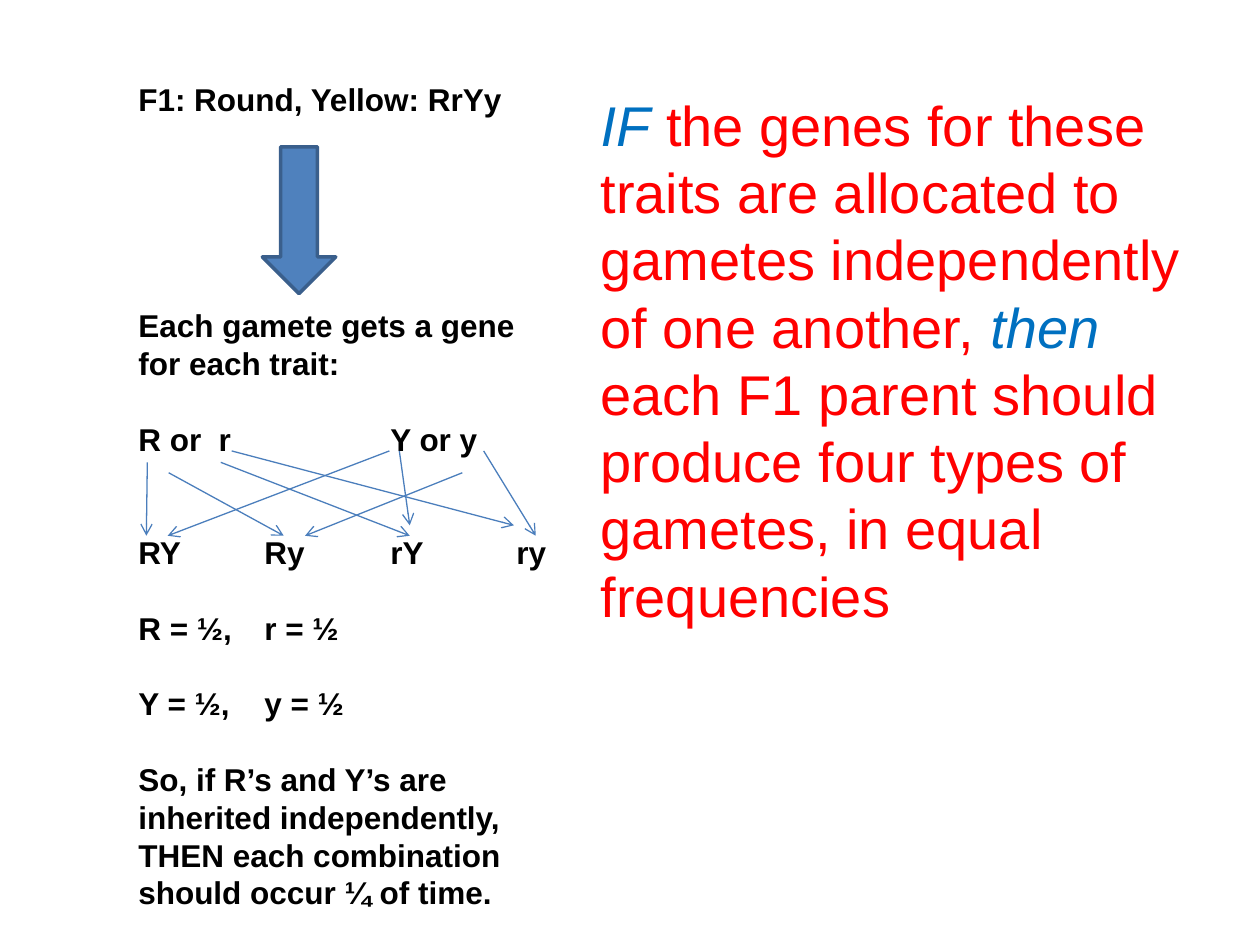
from typing import NamedTuple

from lxml import etree
from pptx import Presentation
from pptx.dml.color import RGBColor
from pptx.enum.shapes import MSO_CONNECTOR, MSO_SHAPE
from pptx.enum.text import MSO_AUTO_SIZE
from pptx.oxml.ns import qn
from pptx.util import Cm, Pt

LINE = MSO_CONNECTOR.STRAIGHT
DOWN = MSO_SHAPE.DOWN_ARROW
GROW = MSO_AUTO_SIZE.SHAPE_TO_FIT_TEXT
FONT = "Arial"
SIZE = 18
PITCH = SIZE * 1.2
TAB = 2.54
HEX = {
    "black": "000000", "red": "FF0000", "blue": "0070C0",
    "fill": "4F81BD", "edge": "3A5F8C", "link": "4B7EBC",
}


class Step(NamedTuple):
    """A line of the cross and the number of empty rows above it."""
    text: str
    gap: int = 1


class Link(NamedTuple):
    """An arrow from an allele to a gamete, in centimetres."""
    x: float
    y: float
    to_x: float
    to_y: float


class Part(NamedTuple):
    """A piece of the claim and whether it is stressed."""
    text: str
    stress: bool = False


STEPS = [
    Step("F1: Round, Yellow: RrYy", 0),
    Step("Each gamete gets a gene for each trait:", 5),
    Step("R or  r\t\tY or y"),
    Step("RY\tRy\trY\try", 2),
    Step("R = ½,\tr = ½"),
    Step("Y = ½,\ty = ½"),
    Step("So, if R’s and Y’s are inherited independently,"),
    Step("THEN each combination should occur ¼ of time.", 0),
]
HIGH, MID, LOW = 9.09, 9.32, 9.53
NEAR, END = 10.59, 10.8
LINKS = [
    Link(2.97, MID, 2.95, END),
    Link(3.4, LOW, 5.72, END),
    Link(4.45, MID, 8.26, END),
    Link(7.85, HIGH, 3.38, END),
    Link(9.32, LOW, 6.15, END),
    Link(4.67, HIGH, 10.36, NEAR),
    Link(8.05, HIGH, 8.26, NEAR),
    Link(9.75, HIGH, 10.8, END),
]
CLAIM = [
    Part("IF", True),
    Part(" the genes for these traits are allocated to gametes independently of one another, "),
    Part("then", True),
    Part(" each F1 parent should produce four types of gametes, in equal frequencies"),
]


def tint(name: str) -> RGBColor:
    """Return a named colour."""
    return RGBColor.from_string(HEX[name])


def add_frame(slide, left: float, top: float, width: float, height: float):
    """Add a wrapping text box and return its text frame."""
    box = slide.shapes.add_textbox(Cm(left), Cm(top), Cm(width), Cm(height))
    frame = box.text_frame
    frame.word_wrap = True
    frame.auto_size = GROW
    return frame


def add_tabs(para, count: int) -> None:
    """Give a paragraph evenly spaced left tab stops."""
    props = para._p.get_or_add_pPr()
    tabs = etree.SubElement(props, qn("a:tabLst"))
    for i in range(1, count + 1):
        etree.SubElement(tabs, qn("a:tab"), pos=str(Cm(i * TAB)), algn="l")


def add_steps(slide, steps: list[Step]) -> None:
    """Write the steps of the cross, one paragraph each."""
    frame = add_frame(slide, 2.54, 1.48, 8.89, 17.2)
    for i, step in enumerate(steps):
        para = frame.add_paragraph() if i else frame.paragraphs[0]
        para.text = step.text
        para.space_before = Pt(step.gap * PITCH)
        if "\t" in step.text:
            add_tabs(para, 3)
        font = para.font
        font.name, font.size, font.bold = FONT, Pt(SIZE), True
        font.color.rgb = tint("black")


def add_claim(slide, parts: list[Part]) -> None:
    """Write the claim with its stressed words."""
    para = add_frame(slide, 11.86, 1.7, 12.5, 11.2).paragraphs[0]
    para.font.name, para.font.size = FONT, Pt(32)
    for part in parts:
        run = para.add_run()
        run.text = part.text
        run.font.italic = part.stress
        run.font.color.rgb = tint("blue" if part.stress else "red")


def add_block(slide) -> None:
    """Draw the block arrow from the parent to its gametes."""
    block = slide.shapes.add_shape(DOWN, Cm(5.29), Cm(2.96), Cm(1.48), Cm(2.96))
    block.shadow.inherit = False
    block.fill.solid()
    block.fill.fore_color.rgb = tint("fill")
    block.line.color.rgb = tint("edge")
    block.line.width = Pt(2)


def add_link(slide, link: Link) -> None:
    """Draw a thin line with an open head at its end."""
    line = slide.shapes.add_connector(LINE, *(Cm(v) for v in link))
    line.line.color.rgb = tint("link")
    line.line.width = Pt(0.75)
    props = line.element.spPr
    etree.SubElement(props.find(qn("a:ln")), qn("a:tailEnd"), type="arrow")
    etree.SubElement(props, qn("a:effectLst"))


def main() -> None:
    """Build and save the slide."""
    deck = Presentation()
    deck.slide_width, deck.slide_height = Cm(25.4), Cm(19.05)
    slide = deck.slides.add_slide(deck.slide_layouts[6])
    add_steps(slide, STEPS)
    add_block(slide)
    for link in LINKS:
        add_link(slide, link)
    add_claim(slide, CLAIM)
    deck.save("out.pptx")


if __name__ == "__main__":
    main()
